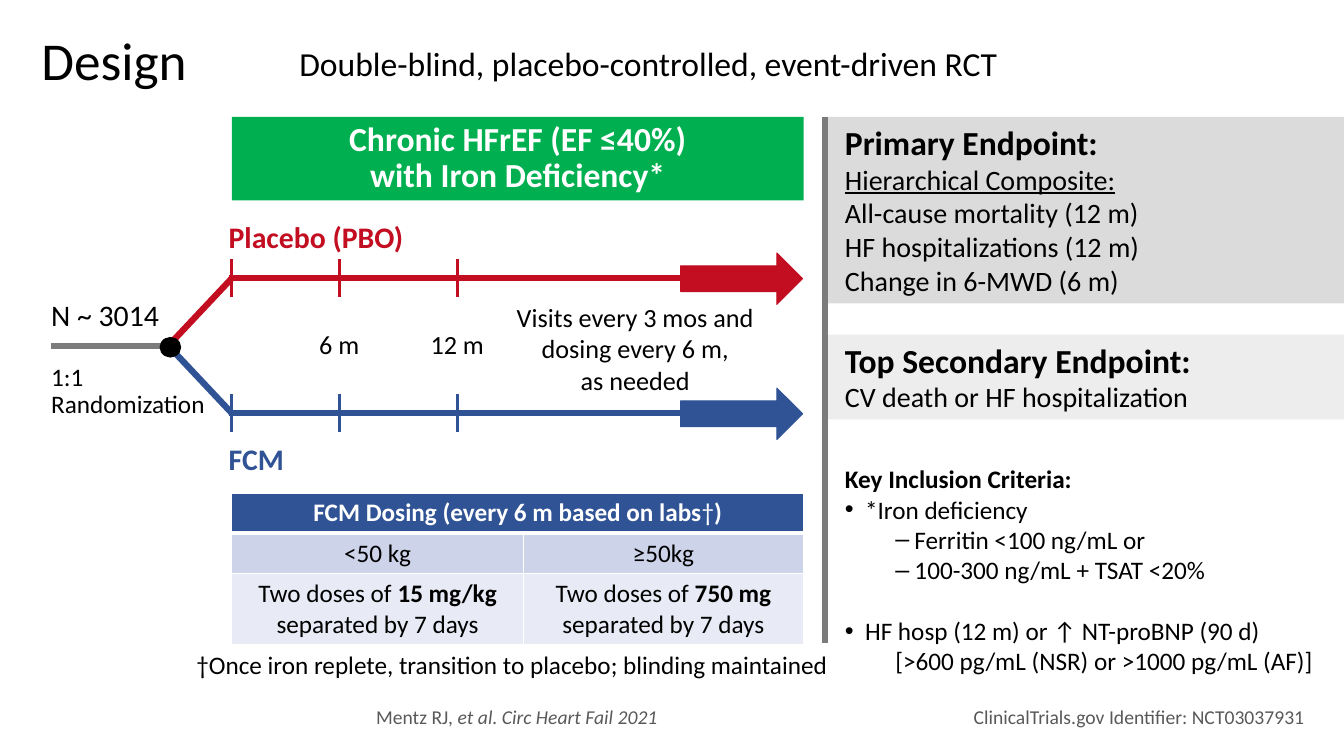
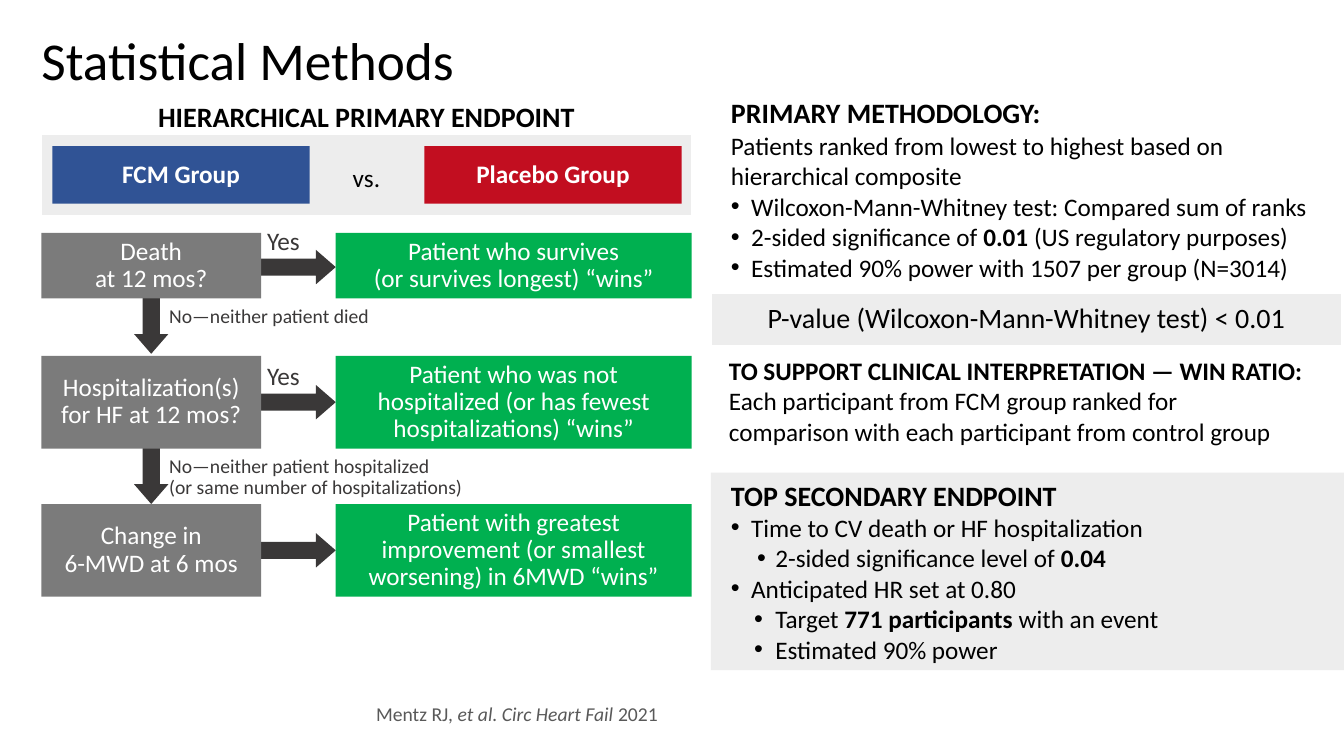
from lxml import etree
from pptx import Presentation
from pptx import util as u
from pptx.dml.color import RGBColor
from pptx.enum import shapes, text
from pptx.oxml import ns

PX = 9144  # EMU; 100 px to the inch
FONT = "Calibri"
BLACK = RGBColor(0x00, 0x00, 0x00)
WHITE = RGBColor(0xFF, 0xFF, 0xFF)
BLUE = RGBColor(0x30, 0x53, 0x95)
RED = RGBColor(0xC2, 0x0E, 0x20)
GREEN = RGBColor(0x00, 0xB0, 0x50)
GREY = RGBColor(0x7B, 0x7B, 0x7B)
CHARCOAL = RGBColor(0x3A, 0x38, 0x38)
FOOT = RGBColor(0x59, 0x59, 0x59)
MID_BAND = RGBColor(0xDB, 0xDB, 0xDB)
PALE_BAND = RGBColor(0xED, 0xED, 0xED)
ROW_MID = RGBColor(0xCD, 0xD4, 0xEA)
ROW_PALE = RGBColor(0xE8, 0xEB, 0xF5)

LEFT, CENTER, RIGHT = text.PP_ALIGN.LEFT, text.PP_ALIGN.CENTER, text.PP_ALIGN.RIGHT
TOP, MIDDLE = text.MSO_ANCHOR.TOP, text.MSO_ANCHOR.MIDDLE
RECT, OVAL = shapes.MSO_SHAPE.RECTANGLE, shapes.MSO_SHAPE.OVAL
RIGHT_ARROW, DOWN_ARROW = shapes.MSO_SHAPE.RIGHT_ARROW, shapes.MSO_SHAPE.DOWN_ARROW
INSET = (10, 5, 10, 5)
PANEL_INSET = (20, 5, 10, 5)
NO_INSET = (0, 0, 0, 0)


def para(*runs, **style):
    """A paragraph: runs are text or (text, flags); flags are letters of b, i, u."""
    return runs, style


def bullet(*runs, left=20, hang=20, mark="•", **style):
    return para(*runs, left=left, hang=hang, mark=mark, **style)


# Slide 1
ARMS = [("Placebo (PBO)", RED, 276, 212), ("FCM", BLUE, 410, 432)]
TICKS = [230, 337, 454]
VISITS = [("6 m", 337), ("12 m", 454)]
POPULATION = [para("Chronic HFrEF (EF ≤40%)", flags="b"),
              para("with Iron Deficiency*", flags="b")]
PRIMARY = [para("Primary Endpoint:", size=24, flags="b"),
           para("Hierarchical Composite:", flags="u"),
           "All-cause mortality (12 m)", "HF hospitalizations (12 m)",
           "Change in 6-MWD (6 m)"]
SECONDARY = [para("Top Secondary Endpoint:", size=24, flags="b"),
             "CV death or HF hospitalization"]
INCLUSION = [para("Key Inclusion Criteria:", flags="b"),
             bullet("*Iron deficiency"),
             bullet("Ferritin <100 ng/mL or", left=69, hang=19, mark="–"),
             bullet("100-300 ng/mL + TSAT <20%", left=69, hang=19, mark="–"),
             bullet("HF hosp (12 m) or ↑ NT-proBNP (90 d)", before=22),
             para("[>600 pg/mL (NSR) or >1000 pg/mL (AF)]", left=50)]
DOSING_COLS = [289, 278]
DOSING = [  # height, fill, text colour, cells
    (40, BLUE, WHITE, [para(("FCM Dosing (every 6 m based on labs", "b"), "†", (")", "b"))]),
    (40, ROW_MID, BLACK, ["<50 kg", "≥50kg"]),
    (70, ROW_PALE, BLACK,
     [para("Two doses of ", (dose, "b"), " separated by 7 days")
      for dose in ("15 mg/kg", "750 mg")]),
]

# Slide 2
GROUPS = [("FCM Group", 52, BLUE), ("Placebo Group", 421, RED)]
STEPS = [  # top, height, arrow top, question, yes label, winner, no label
    (231, 65, 248, ["Death", "at 12 mos?"], "Yes",
     ["Patient who survives", "(or survives longest) “wins”"],
     ["No—neither patient died"]),
    (353, 92, 382, ["Hospitalization(s)", "for HF at 12 mos?"], "Yes",
     ["Patient who was not hospitalized (or has fewest hospitalizations) “wins”"],
     ["No—neither patient hospitalized", "(or same number of hospitalizations)"]),
    (500, 92, 529, ["Change in", "6-MWD at 6 mos"], None,
     ["Patient with greatest improvement (or smallest worsening) in 6MWD “wins”"], None),
]
METHODOLOGY = [
    para("PRIMARY METHODOLOGY:", size=20, flags="b"),
    "Patients ranked from lowest to highest based on hierarchical composite",
    bullet("Wilcoxon-Mann-Whitney test: Compared sum of ranks"),
    bullet("2-sided significance of ", ("0.01 ", "b"), "(US regulatory purposes)"),
    bullet("Estimated 90% power with 1507 per group (N=3014)"),
]
WIN_RATIO = [para("TO SUPPORT CLINICAL INTERPRETATION — WIN RATIO:", flags="b"),
             "Each participant from FCM group ranked for",
             "comparison with each participant from control group"]
TOP_SECONDARY = [
    para("TOP SECONDARY ENDPOINT", size=20, flags="b"),
    bullet("Time to CV death or HF hospitalization"),
    bullet("2-sided significance level of ", ("0.04", "b"), left=44, hang=18),
    bullet("Anticipated HR set at 0.80"),
    bullet("Target ", ("771 participants", "b"), " with an event", left=44, hang=21),
    bullet("Estimated 90% power", left=44, hang=21),
]


def add_bullet(p, mark):
    pPr = p._p.get_or_add_pPr()
    color = etree.SubElement(pPr, ns.qn("a:buClr"))
    etree.SubElement(color, ns.qn("a:srgbClr"), val=str(BLACK))
    etree.SubElement(pPr, ns.qn("a:buFont"), typeface="Arial")
    etree.SubElement(pPr, ns.qn("a:buChar"), char=mark)


def write(tf, paras, size=18, color=BLACK, align=LEFT, spacing=1.0, flags=""):
    for i, item in enumerate(paras):
        runs, style = para(item) if isinstance(item, str) else item
        p = tf.add_paragraph() if i else tf.paragraphs[0]
        if "mark" in style:
            add_bullet(p, style["mark"])
        if "left" in style:
            pPr = p._p.get_or_add_pPr()
            pPr.set("marL", str(style["left"] * PX))
            pPr.set("indent", str(-style.get("hang", 0) * PX))
        if "before" in style:
            p.space_before = u.Pt(style["before"])
        p.alignment = align
        p.line_spacing = spacing
        for run in runs:
            words, marks = (run, "") if isinstance(run, str) else run
            marks += style.get("flags", flags)
            r = p.add_run()
            r.text = words
            r.font.name = FONT
            r.font.size = u.Pt(style.get("size", size))
            r.font.color.rgb = color
            r.font.bold = "b" in marks
            r.font.italic = "i" in marks
            r.font.underline = "u" in marks


def fill_frame(sp, paras, inset, anchor, style):
    tf = sp.text_frame
    tf.word_wrap = True
    tf.vertical_anchor = anchor
    tf.margin_left, tf.margin_top, tf.margin_right, tf.margin_bottom = (
        m * PX for m in inset)
    write(tf, paras, **style)


def add_text(s, x, y, w, h, paras, inset=INSET, anchor=TOP, **style):
    sp = s.shapes.add_textbox(x * PX, y * PX, w * PX, h * PX)
    fill_frame(sp, paras, inset, anchor, style)


def add_box(s, x, y, w, h, fill, paras=(), kind=RECT, line=None, line_pt=1.5,
            inset=INSET, anchor=MIDDLE, **style):
    sp = s.shapes.add_shape(kind, x * PX, y * PX, w * PX, h * PX)
    sp.shadow.inherit = False
    sp.fill.solid()
    sp.fill.fore_color.rgb = fill
    if line is None:
        sp.line.fill.background()
    else:
        sp.line.color.rgb = line
        sp.line.width = u.Pt(line_pt)
    if paras:
        fill_frame(sp, paras, inset, anchor, style)
    return sp


def add_line(s, x1, y1, x2, y2, color, weight=4.5):
    c = s.shapes.add_connector(shapes.MSO_CONNECTOR.STRAIGHT,
                               x1 * PX, y1 * PX, x2 * PX, y2 * PX)
    c.line.color.rgb = color
    c.line.width = u.Pt(weight)
    etree.SubElement(c._element.spPr, ns.qn("a:effectLst"))


def add_step_arrow(s, kind, x, y, w, h):
    add_box(s, x, y, w, h, CHARCOAL, kind=kind).adjustments[1] = 0.576


def new_slide(prs, title, citation, spacing):
    """A slide with the shared title and citation footer."""
    s = prs.slides.add_slide(prs.slide_layouts[6])
    add_text(s, 41, 0, 1251, 125, [title], NO_INSET, MIDDLE, size=38, spacing=0.9)
    add_text(s, 373, 699, 281, 24, [para("Mentz RJ, ", *citation)], NO_INSET,
             size=14, color=FOOT, spacing=spacing)
    return s


def set_borders(cell, bottom):
    tcPr = cell._tc.get_or_add_tcPr()
    for i, (side, weight) in enumerate(zip("LRTB", (1, 1, 1, bottom))):
        ln = etree.Element(ns.qn(f"a:ln{side}"), w=str(u.Pt(weight)))
        solid = etree.SubElement(ln, ns.qn("a:solidFill"))
        etree.SubElement(solid, ns.qn("a:srgbClr"), val=str(WHITE))
        tcPr.insert(i, ln)


def add_dosing_table(s):
    heights = [row[0] for row in DOSING]
    table = s.shapes.add_table(len(DOSING), len(DOSING_COLS), 230 * PX, 489 * PX,
                               sum(DOSING_COLS) * PX, sum(heights) * PX).table
    for col, width in zip(table.columns, DOSING_COLS):
        col.width = width * PX
    table.cell(0, 0).merge(table.cell(0, 1))
    for i, (height, fill, color, cells) in enumerate(DOSING):
        table.rows[i].height = height * PX
        for j in range(len(DOSING_COLS)):
            cell = table.cell(i, j)
            cell.fill.solid()
            cell.fill.fore_color.rgb = fill
            set_borders(cell, 1 if i else 3)
            if j < len(cells):
                write(cell.text_frame, [cells[j]], color=color, align=CENTER)


def build_design(prs):
    s = new_slide(prs, "Design", [("et al. Circ Heart Fail 2021", "i")], 1.0)
    add_text(s, 227, 42, 832, 46, ["Double-blind, placebo-controlled, event-driven RCT"],
             size=24, align=CENTER, spacing=0.9)
    add_dosing_table(s)
    for name, color, y, label_top in ARMS:
        add_line(s, 227, y, 792, y, color)
        add_line(s, 167, 343, 230, y, color)
        for x in TICKS:
            add_line(s, x, y - 19, x, y + 19, color, 2.25)
        add_box(s, 675, y - 25, 121, 51, color, kind=RIGHT_ARROW, line=color, line_pt=0.75)
        add_text(s, 217, label_top, 553, 46, [name], size=21.3, color=color, flags="b")
    add_line(s, 51, 343, 166, 343, GREY)
    add_box(s, 159, 335, 20, 19, BLACK, kind=OVAL, line=BLACK, line_pt=1)
    add_text(s, 41, 289, 351, 46, ["N ~ 3014"], size=21.3)
    add_text(s, 41, 357, 187, 65, ["1:1", "Randomization"], spacing=0.9)
    for label, x in VISITS:
        add_text(s, x - 63, 321, 125, 42, [label], size=18.7, align=CENTER)
    add_text(s, 490, 294, 280, 104, ["Visits every 3 mos and dosing every 6 m,", "as needed"],
             size=18.7, align=CENTER)
    add_box(s, 230, 116, 567, 83, GREEN, POPULATION, size=24, color=WHITE,
            align=CENTER, spacing=0.9)
    for y, h, fill, paras in [(116, 185, MID_BAND, PRIMARY), (332, 84, PALE_BAND, SECONDARY)]:
        add_box(s, 818, y, 515, h, fill, paras, inset=PANEL_INSET, anchor=TOP, size=20)
    add_text(s, 818, 455, 525, 283, INCLUSION, PANEL_INSET)
    add_line(s, 818, 638, 818, 116, GREY)
    add_text(s, 185, 639, 657, 40,
             ["†Once iron replete, transition to placebo; blinding maintained"])
    add_text(s, 962, 699, 332, 24, ["ClinicalTrials.gov Identifier: NCT03037931"], NO_INSET,
             size=14, color=FOOT, align=RIGHT)


def build_methods(prs):
    s = new_slide(prs, "Statistical Methods", [("et al. Circ Heart Fail ", "i"), "2021"], 0.9)
    add_box(s, 41, 133, 645, 81, PALE_BAND, line=WHITE)
    add_text(s, 41, 98, 645, 40, ["HIERARCHICAL PRIMARY ENDPOINT"], (0, 5, 0, 5), MIDDLE,
             size=20, align=CENTER, spacing=0.9, flags="b")
    centred = dict(color=WHITE, align=CENTER, spacing=0.9)
    for name, x, fill in GROUPS:
        add_box(s, x, 145, 255, 57, fill, [name], flags="b", **centred)
    add_text(s, 296, 160, 135, 37, ["vs."], align=CENTER, spacing=0.9)

    note = dict(color=CHARCOAL, spacing=0.9)
    for y, h, arrow_y, question, yes, winner, no in STEPS:
        add_step_arrow(s, RIGHT_ARROW, 255, arrow_y, 78, 34)
        if yes:
            add_text(s, 255, arrow_y - 26, 78, 37, [yes], **note)
        if no:
            add_step_arrow(s, DOWN_ARROW, 133, y + h - 23, 34, 78)
            add_text(s, 158, y + h + 3, 470, 53, no, size=14, **note)
    for y, h, _, question, _, winner, _ in STEPS:
        add_box(s, 41, y, 218, h, GREY, question, **centred)
        add_box(s, 333, y, 353, h, GREEN, winner, **centred)

    add_text(s, 705, 90, 628, 196, METHODOLOGY, PANEL_INSET, spacing=1.01)
    add_box(s, 705, 291, 626, 52, PALE_BAND, ["P-value (Wilcoxon-Mann-Whitney test) < 0.01"],
            line=WHITE, size=20, align=CENTER, spacing=0.9)
    add_text(s, 703, 347, 628, 103, WIN_RATIO, PANEL_INSET, spacing=1.01)
    add_box(s, 705, 469, 628, 196, PALE_BAND, TOP_SECONDARY, inset=PANEL_INSET,
            anchor=TOP, spacing=1.01)


def main():
    prs = Presentation()
    prs.slide_width, prs.slide_height = 1333 * PX, 750 * PX
    build_design(prs)
    build_methods(prs)
    prs.save("out.pptx")


if __name__ == "__main__":
    main()
